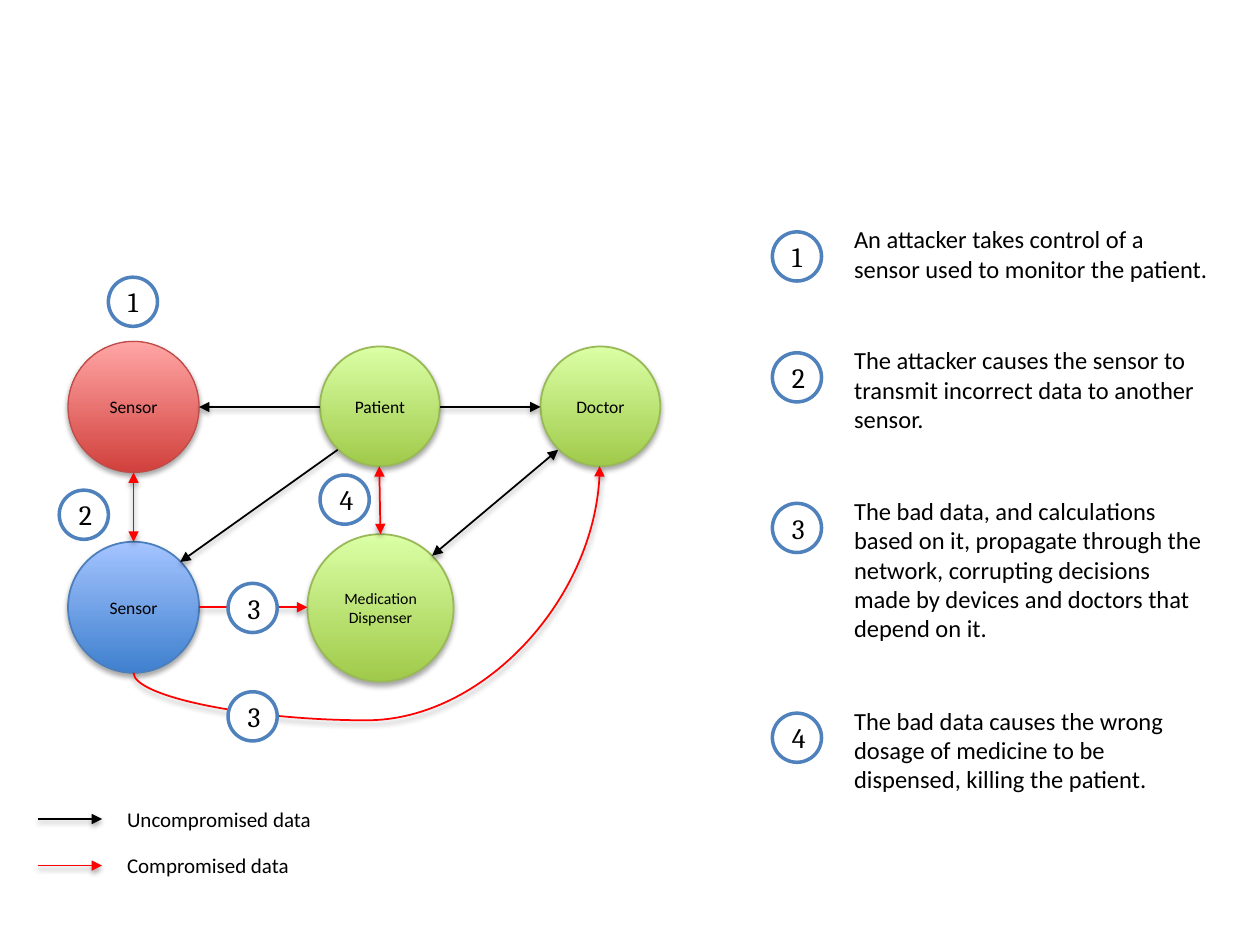
from dataclasses import dataclass

from lxml import etree
from pptx import Presentation
from pptx.dml.color import RGBColor
from pptx.enum import shapes, text
from pptx.oxml import ns
from pptx.util import Inches, Pt

BLACK, RED, WHITE, BADGE_BLUE = "000000", "FF0000", "FFFFFF", "4F81BD"
BADGE_SIZE = 0.39
LINE_HEIGHT, TEXT_PADDING, STEP_GAP = 0.235, 0.1, 0.39


@dataclass
class Palette:
    dark: str
    light: str
    outline: str
    width: float = 1


@dataclass
class Node:
    label: str
    left: float
    top: float
    width: float
    height: float
    palette: Palette
    size: float = 10


@dataclass
class Flow:
    start: tuple[float, float]
    end: tuple[float, float]
    color: str = BLACK
    head: bool = False
    tail: bool = True


@dataclass
class Step:
    wording: str
    lines: int


BLUE = Palette("3F80CE", "A4C4FF", "4B7EBC")
GREEN = Palette("A0CA4A", "DAFFA5", "98B955")
ATTACKED = Palette("D1403C", "FFA6A5", "BF4C48", 0.75)

NODES = [
    Node("Sensor", 0.54, 4.3, 1.04, 1.04, BLUE),
    Node("Medication Dispenser", 2.44, 4.24, 1.16, 1.17, GREEN, 9),
    Node("Patient", 2.54, 2.75, 0.95, 0.95, GREEN),
    Node("Sensor", 0.54, 2.71, 1.04, 1.04, ATTACKED),
    Node("Doctor", 4.29, 2.75, 0.95, 0.95, GREEN),
]
FLOWS = [
    Flow((1.43, 4.46), (2.68, 3.57), head=True, tail=False),
    Flow((1.58, 4.82), (2.44, 4.82), RED),
    Flow((3.49, 3.23), (4.29, 3.23)),
    Flow((3.01, 3.7), (3.02, 4.24), RED, head=True),
    Flow((1.58, 3.23), (2.54, 3.23), head=True, tail=False),
    Flow((3.43, 4.41), (4.43, 3.57), head=True),
    Flow((1.06, 3.75), (1.06, 4.3), RED, head=True),
]
SENSOR_TO_DOCTOR = Flow((1.06, 5.34), (4.76, 3.7), RED)
BADGES = [("1", 0.86, 2.2), ("2", 0.47, 3.89), ("3", 1.81, 5.49),
          ("3", 1.81, 4.63), ("4", 2.54, 3.77)]
STEPS = [
    Step("An attacker takes control of a sensor used to monitor the patient.", 2),
    Step("The attacker causes the sensor to transmit incorrect data to another sensor.", 3),
    Step("The bad data, and calculations based on it, propagate through the network, "
         "corrupting decisions made by devices and doctors that depend on it.", 5),
    Step("The bad data causes the wrong dosage of medicine to be dispensed, "
         "killing the patient.", 3),
]
LEGEND = [("Uncompromised data", BLACK, 6.5), ("Compromised data", RED, 6.87)]


def rgb(color: str) -> RGBColor:
    return RGBColor.from_string(color)


def add_element(parent, tag: str, **attributes: str):
    return etree.SubElement(parent, ns.qn(tag), attributes)


def add_shadow(effects) -> None:
    shadow = add_element(effects, "a:outerShdw", blurRad=str(Pt(3.1)), dist=str(Pt(1.8)),
                         dir="5400000", rotWithShape="0")
    tint = add_element(shadow, "a:srgbClr", val=BLACK)
    add_element(tint, "a:alpha", val="35000")


def write(shape, wording: str, **font_values) -> None:
    paragraph = shape.text_frame.paragraphs[0]
    run = paragraph.add_run()
    run.text = wording
    for name, value in font_values.items():
        setattr(run.font, name, value)
    run.font.color.rgb = rgb(BLACK)


def add_circle(slide, left: float, top: float, width: float, height: float,
               outline: str, line_width: float):
    circle = slide.shapes.add_shape(shapes.MSO_SHAPE.OVAL, *map(Inches, (left, top, width, height)))
    circle.line.color.rgb = rgb(outline)
    circle.line.width = Pt(line_width)
    circle.shadow.inherit = False
    circle.text_frame.vertical_anchor = text.MSO_ANCHOR.MIDDLE
    circle.text_frame.paragraphs[0].alignment = text.PP_ALIGN.CENTER
    return circle


def add_node(slide, node: Node) -> None:
    palette = node.palette
    circle = add_circle(slide, node.left, node.top, node.width, node.height,
                        palette.outline, palette.width)
    circle.fill.gradient()
    circle.fill.gradient_angle = 90
    for stop, color in zip(circle.fill.gradient_stops, (palette.dark, palette.light)):
        stop.color.rgb = rgb(color)
    for stop, position in zip(circle.fill.gradient_stops, (0, 1)):
        stop.position = position
    add_shadow(circle._element.spPr.find(ns.qn("a:effectLst")))
    write(circle, node.label, size=Pt(node.size), name="Calibri")


def add_badge(slide, number: str, left: float, top: float) -> None:
    badge = add_circle(slide, left, top, BADGE_SIZE, BADGE_SIZE, BADGE_BLUE, 2)
    badge.fill.solid()
    badge.fill.fore_color.rgb = rgb(WHITE)
    write(badge, number, size=Pt(16), name="Cambria")


def add_flow(slide, flow: Flow, kind=shapes.MSO_CONNECTOR.STRAIGHT):
    arrow = slide.shapes.add_connector(kind, *map(Inches, flow.start + flow.end))
    arrow.line.color.rgb = rgb(flow.color)
    arrow.line.width = Pt(1)
    line = arrow.line._get_or_add_ln()
    for tag, shown in (("a:headEnd", flow.head), ("a:tailEnd", flow.tail)):
        if shown:
            add_element(line, tag, type="triangle")
    add_shadow(add_element(arrow._element.spPr, "a:effectLst"))
    return arrow


def add_curved_flow(slide, flow: Flow, bend: float) -> None:
    """Draw a curve that leaves and arrives vertically: a connector turned by 90 degrees."""
    (x1, y1), (x2, y2) = flow.start, flow.end
    middle_x, middle_y = (x1 + x2) / 2, (y1 + y2) / 2
    half_width, half_height = abs(y2 - y1) / 2, abs(x2 - x1) / 2
    turned = Flow((middle_x + half_width, middle_y + half_height),
                  (middle_x - half_width, middle_y - half_height), flow.color)
    properties = add_flow(slide, turned, shapes.MSO_CONNECTOR.CURVE)._element.spPr
    properties.find(ns.qn("a:xfrm")).set("rot", "5400000")
    adjustments = properties.find(ns.qn("a:prstGeom")).find(ns.qn("a:avLst"))
    add_element(adjustments, "a:gd", name="adj1", fmla=f"val {round(bend * 100000)}")


def add_caption(slide, wording: str, left: float, top: float, height: float, size: float) -> None:
    caption = slide.shapes.add_textbox(*map(Inches, (left, top, 3.02, height)))
    caption.text_frame.word_wrap = True
    caption.text_frame.auto_size = text.MSO_AUTO_SIZE.SHAPE_TO_FIT_TEXT
    write(caption, wording, size=Pt(size), name="Calibri")


def main() -> None:
    deck = Presentation()
    deck.slide_width, deck.slide_height = Inches(10), Inches(7.5)
    slide = deck.slides.add_slide(deck.slide_layouts[6])

    top = 1.73
    for number, step in enumerate(STEPS, start=1):
        height = step.lines * LINE_HEIGHT + TEXT_PADDING
        add_badge(slide, str(number), 6.13, top + 0.11)
        add_caption(slide, step.wording, 6.68, top, height, 14)
        top += height + STEP_GAP

    for node in NODES:
        add_node(slide, node)
    for flow in FLOWS:
        add_flow(slide, flow)
    add_curved_flow(slide, SENSOR_TO_DOCTOR, -0.23)
    for badge in BADGES:
        add_badge(slide, *badge)

    for meaning, color, y in LEGEND:
        add_flow(slide, Flow((0.3, y), (0.81, y), color))
        add_caption(slide, meaning, 0.91, y - 0.15, 0.3, 12)

    deck.save("out.pptx")


if __name__ == "__main__":
    main()
